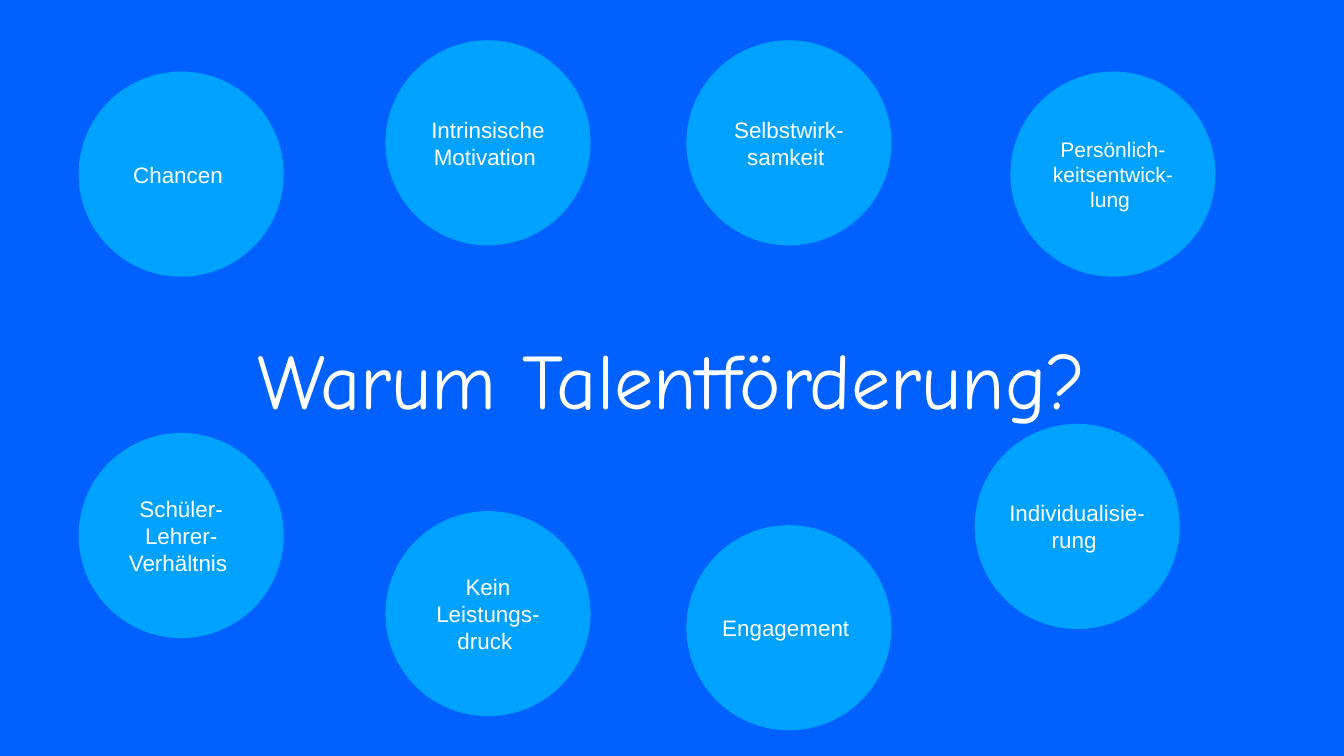
from dataclasses import dataclass

import pptx
import pptx.util
import pptx.dml.color
import pptx.enum.shapes
import pptx.enum.text


@dataclass(frozen=True)
class Theme:
    background: str = "0061FE"
    circle: str = "00A2FF"
    text: str = "FFFFFF"
    title_font: str = "Comic Neue"
    label_font: str = "Arial"
    title_size: int = 112
    label_size: int = 32
    small_size: int = 30


class Deck:
    """Holds the theme and current slide; positions are percent of the slide."""

    def __init__(self, prs, theme):
        self.prs, self.theme = prs, theme
        self.s = prs.slides.add_slide(prs.slide_layouts[6])
        self.paint(self.s.background.fill, theme.background)

    def paint(self, fill, color):
        fill.solid()
        fill.fore_color.rgb = pptx.dml.color.RGBColor.from_string(color)

    def across(self, share):
        return round(self.prs.slide_width * share / 100)

    def down(self, share):
        return round(self.prs.slide_height * share / 100)

    def set_text(self, sp, text, font, size, inset=0):
        tf = sp.text_frame
        tf.word_wrap = True
        tf.vertical_anchor = pptx.enum.text.MSO_ANCHOR.MIDDLE
        tf.margin_left = tf.margin_right = pptx.util.Inches(inset)
        tf.margin_top = tf.margin_bottom = pptx.util.Inches(inset)
        tf.text = text
        for p in tf.paragraphs:
            p.alignment = pptx.enum.text.PP_ALIGN.CENTER
            p.font.name = font
            p.font.size = pptx.util.Pt(size)
            self.paint(p.font.fill, self.theme.text)

    def title(self, text, x, y, w, h):
        sp = self.s.shapes.add_textbox(
            self.across(x), self.down(y), self.across(w), self.down(h))
        self.set_text(sp, text, self.theme.title_font, self.theme.title_size, 0.06)

    def circle(self, text, x, y, size, diameter=27.13):
        d = self.down(diameter)
        sp = self.s.shapes.add_shape(
            pptx.enum.shapes.MSO_SHAPE.OVAL, self.across(x), self.down(y), d, d)
        sp.shadow.inherit = False
        self.paint(sp.fill, self.theme.circle)
        sp.line.fill.background()
        self.set_text(sp, text, self.theme.label_font, size)


def main():
    prs = pptx.Presentation()
    prs.slide_width = pptx.util.Inches(26.67)
    prs.slide_height = pptx.util.Inches(15)
    theme = Theme()
    deck = Deck(prs, theme)

    deck.title("Warum Talentförderung?", 7.27, 33.07, 85.41, 33.87)

    left, mid_left, mid_right = 5.85, 28.68, 51.07
    outer_top, inner_top = 9.47, 5.33
    normal, small = theme.label_size, theme.small_size
    reasons = [
        ("Chancen ", left, outer_top, normal),
        ("Intrinsische Motivation ", mid_left, inner_top, normal),
        ("Engagement ", mid_right, 69.47, normal),
        ("Kein Leistungs-druck ", mid_left, 67.6, normal),
        ("Selbstwirk-samkeit ", mid_right, inner_top, normal),
        ("Persönlich-\nkeitsentwick-lung ", 75.18, outer_top, small),
        ("Schüler-Lehrer-Verhältnis ", left, 57.27, normal),
        ("Individualisie-\nrung ", 72.52, 56.07, normal),
    ]
    for reason in reasons:
        deck.circle(*reason)

    prs.save("out.pptx")


if __name__ == "__main__":
    main()
